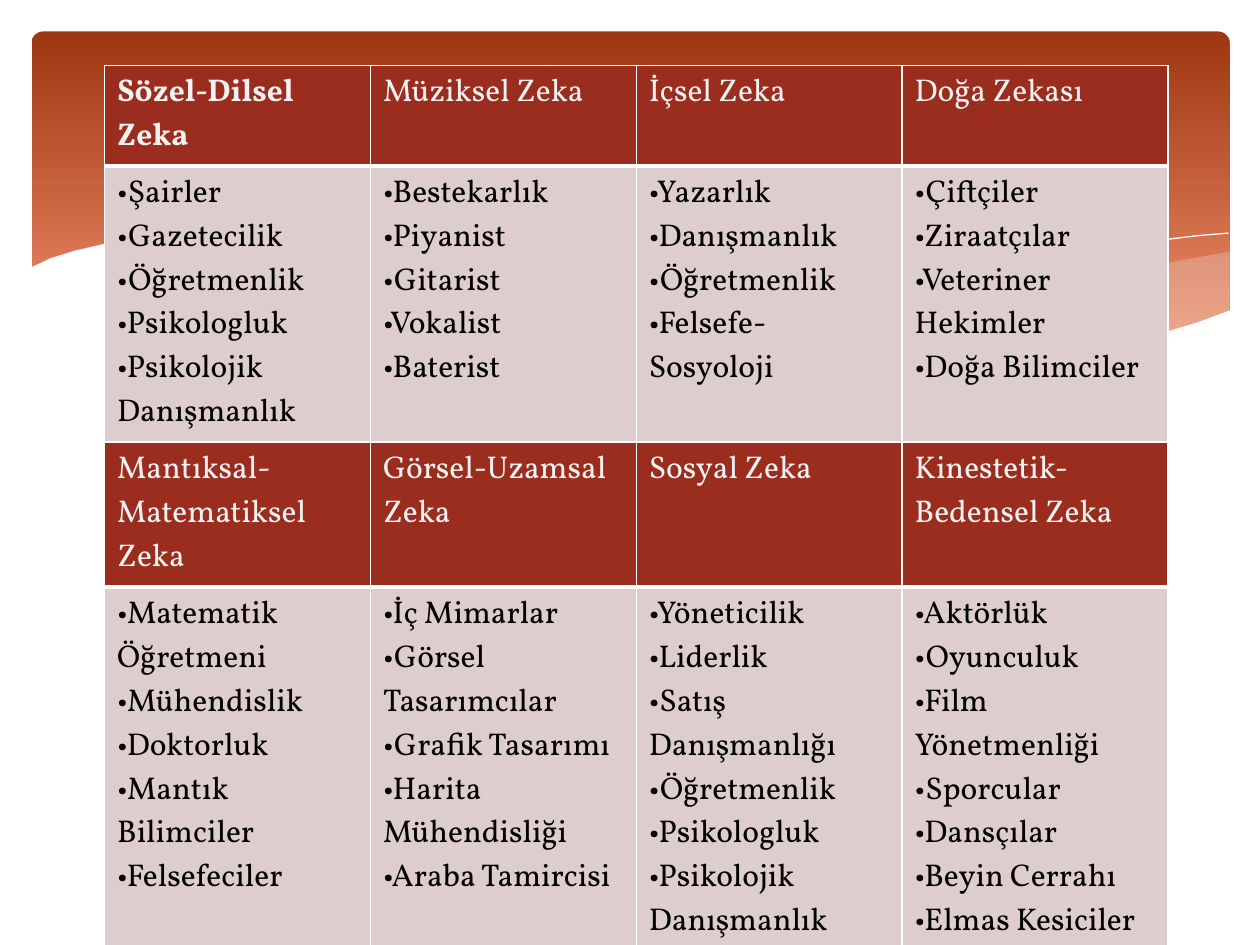
from lxml import etree
from pptx import Presentation
from pptx.dml.color import RGBColor
from pptx.enum.shapes import MSO_SHAPE
from pptx.oxml.ns import qn
from pptx.util import Inches, Pt

ROUND = MSO_SHAPE.ROUNDED_RECTANGLE
FONT, SIZE = "Vollkorn", 18
WHITE, RED, PINK = "FFFFFF", "9B2D1F", "DECDCD"
PALE, BLACK, SAND = "F2F2F2", "000000", "E9E5DC"
UNIT = 9144  # wave points are in hundredths of an inch
COL = 2.11

# Each table: top, row heights, then (heading, jobs) per column
TABLES = [
    (0.52, (0.58, 2.09), [
        ("Sözel-Dilsel Zeka", ["•Şairler", "•Gazetecilik", "•Öğretmenlik",
                               "•Psikologluk", "•Psikolojik Danışmanlık"]),
        ("Müziksel Zeka", ["•Bestekarlık", "•Piyanist", "•Gitarist",
                           "•Vokalist", "•Baterist"]),
        ("İçsel Zeka", ["•Yazarlık", "•Danışmanlık", "•Öğretmenlik",
                        "•Felsefe-Sosyoloji"]),
        ("Doğa Zekası", ["•Çiftçiler", "•Ziraatçılar",
                         "•Veteriner Hekimler", "•Doğa Bilimciler"]),
    ]),
    (3.51, (1.15, 1.84), [
        ("Mantıksal-Matematiksel Zeka",
         ["•Matematik Öğretmeni", "•Mühendislik", "•Doktorluk",
          "•Mantık Bilimciler •Felsefeciler"]),
        ("Görsel-Uzamsal Zeka",
         ["•İç Mimarlar", "•Görsel Tasarımcılar", "•Grafik Tasarımı",
          "•Harita Mühendisliği", "•Araba Tamircisi"]),
        ("Sosyal Zeka",
         ["•Yöneticilik", "•Liderlik", "•Satış Danışmanlığı",
          "•Öğretmenlik", "•Psikologluk", "•Psikolojik Danışmanlık"]),
        ("Kinestetik-Bedensel Zeka",
         ["•Aktörlük", "•Oyunculuk", "•Film Yönetmenliği", "•Sporcular",
          "•Dansçılar", "•Beyin Cerrahı", "•Elmas Kesiciler"]),
    ]),
]

# Waves: fill colour (None for a bare line), opacity in percent, points
WAVES = [
    (SAND, 29, [(975, 200), (935, 207), (891, 216), (832, 230), (779, 242),
                (729, 253), (661, 265), (705, 271), (745, 275), (781, 277),
                (814, 278), (854, 276), (889, 272), (921, 265), (949, 257),
                (976, 247), (976, 200)]),
    (SAND, 40, [(893, 273), (837, 265), (775, 254), (706, 240), (629, 222),
                (584, 211), (541, 203), (502, 196), (442, 189), (380, 185),
                (344, 186), (313, 188), (286, 191), (342, 199), (404, 211),
                (449, 222), (530, 240), (601, 255), (665, 266), (722, 274),
                (773, 277), (818, 278), (857, 277), (893, 273)]),
    (None, 100, [(309, 195), (344, 190), (387, 187), (433, 187), (489, 190),
                 (556, 197), (608, 204), (665, 213), (727, 226), (795, 241),
                 (869, 261), (907, 272)]),
    (None, 100, [(613, 257), (653, 246), (695, 235), (748, 223), (806, 210),
                 (866, 199), (910, 192), (951, 187), (975, 185)]),
    (WHITE, 100, [(977, 246), (950, 256), (920, 265), (887, 271), (850, 275),
                  (809, 277), (761, 275), (708, 270), (648, 262), (579, 250),
                  (503, 233), (447, 220), (391, 207), (340, 197), (292, 190),
                  (250, 186), (211, 184), (161, 184), (119, 187), (85, 193),
                  (59, 199), (40, 205), (23, 213), (23, 329), (977, 329)]),
]


def color(hex_code):
    return RGBColor.from_string(hex_code)


def paint(part, hex_code):
    part.fill.solid()
    part.fill.fore_color.rgb = color(hex_code)


def add_panel(slide):
    box = slide.shapes.add_shape(ROUND, Inches(0.25), Inches(0.25),
                                 Inches(9.51), Inches(2.7))
    box.adjustments[0] = 0.034
    box.shadow.inherit = False
    box.line.fill.background()
    box.fill.gradient()
    box.fill.gradient_angle = 270
    stops = zip(box.fill.gradient_stops, ("9E3611", "EF8C6A"), (0, 0.9))
    for stop, tone, place in stops:
        stop.color.rgb = color(tone)
        stop.position = place


def add_wave(slide, tone, alpha, points):
    pen = slide.shapes.build_freeform(*points[0], scale=UNIT)
    pen.add_line_segments(points[1:], close=tone is not None)
    wave = pen.convert_to_shape()
    wave.shadow.inherit = False
    if tone is None:
        wave.fill.background()
        wave.line.color.rgb = color(WHITE)
        wave.line.width = 0
        return
    paint(wave, tone)
    wave.line.fill.background()
    if alpha < 100:
        rgb = wave._element.spPr.find(".//" + qn("a:srgbClr"))
        etree.SubElement(rgb, qn("a:alpha"), val=str(alpha * 1000))


def add_edges(cell, base):
    props = cell._tc.get_or_add_tcPr()
    for i, (side, width) in enumerate(zip("LRTB", (1, 1, 1, base))):
        edge = etree.Element(qn("a:ln" + side), w=str(Pt(width)))
        fill = etree.SubElement(edge, qn("a:solidFill"))
        etree.SubElement(fill, qn("a:srgbClr"), val=WHITE)
        props.insert(i, edge)


def fill_cell(cell, lines, back, ink, bold, base):
    cell.text = "\n".join(lines)
    for para in cell.text_frame.paragraphs:
        font = para.font
        font.name, font.size, font.bold = FONT, Pt(SIZE), bold
        font.color.rgb = color(ink)
    paint(cell, back)
    add_edges(cell, base)


def add_grid(slide, top, rows, groups, lead):
    count = len(groups)
    grid = slide.shapes.add_table(2, count, Inches(0.83), Inches(top),
                                  Inches(COL * count),
                                  Inches(sum(rows))).table
    for row, high in zip(grid.rows, rows):
        row.height = Inches(high)
    for i, (head, jobs) in enumerate(groups):
        grid.columns[i].width = Inches(COL)
        fill_cell(grid.cell(0, i), [head], RED, PALE, lead and i == 0, 3)
        fill_cell(grid.cell(1, i), jobs, PINK, BLACK, False, 1)


def main():
    deck = Presentation()
    deck.slide_width, deck.slide_height = Inches(10), Inches(7.5)
    slide = deck.slides.add_slide(deck.slide_layouts[6])
    # Backdrop
    add_panel(slide)
    for wave in WAVES:
        add_wave(slide, *wave)
    # Tables; only the very first heading is bold
    for i, table in enumerate(TABLES):
        add_grid(slide, *table, lead=i == 0)
    deck.save("out.pptx")


if __name__ == "__main__":
    main()
